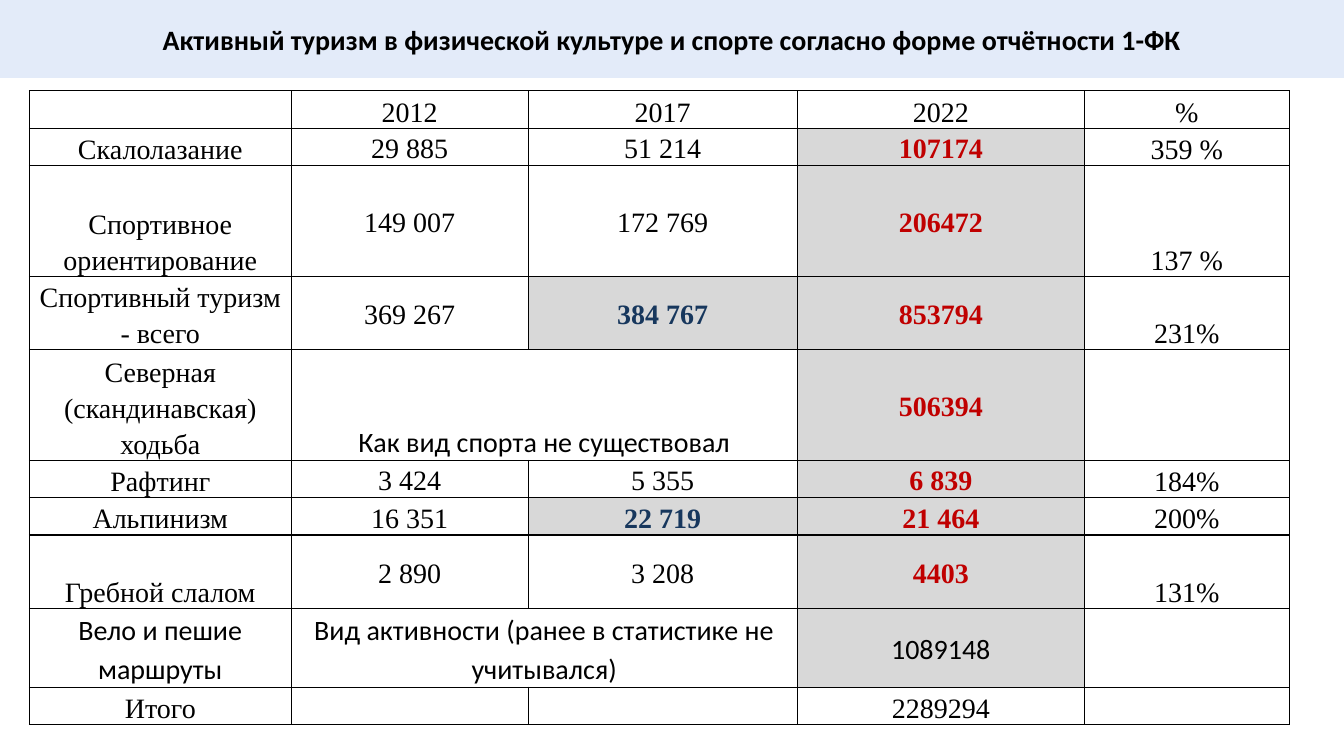
import pptx
import pptx.util
import pptx.dml.color
import pptx.enum.shapes
import pptx.enum.text
import pptx.oxml
import pptx.oxml.ns

Cm, Pt = pptx.util.Cm, pptx.util.Pt
Anchor = pptx.enum.text.MSO_ANCHOR

# Content
title = "Активный туризм в физической культуре и спорте согласно форме отчётности 1-ФК"
# None continues the cell on its left
rows = [
    ("", "2012", "2017", "2022", "%"),
    ("Скалолазание", "29 885", "51 214", "107174", "359 %"),
    ("Спортивное ориентирование", "149 007", "172 769", "206472", "137 %"),
    ("Спортивный туризм - всего", "369 267", "384 767", "853794", "231%"),
    ("Северная (скандинавская) ходьба", "Как вид спорта не существовал", None, "506394", ""),
    ("Рафтинг", "3 424", "5 355", "6 839", "184%"),
    ("Альпинизм", "16 351", "22 719", "21 464", "200%"),
    ("Гребной слалом", "2 890", "3 208", "4403", "131%"),
    ("Вело и пешие маршруты", "Вид активности (ранее в статистике не учитывался)", None,
     "1089148", ""),
    ("Итого", "", "", "2289294", ""),
]
peaks = {(3, 2), (6, 2)}
routes, total, latest = 8, 9, 3
notes = {(4, 1)}

theme = {
    "band": "E3EBF9", "ink": "000000", "red": "C00000", "blue": "17375D", "grey": "D8D8D8",
    "sans": "Calibri", "serif": "Times New Roman", "size": 20,
}

# Layout
widths = [6.6, 5.97, 6.78, 7.24, 5.16]
low, mid, high = 0.94, 1.85, 2.79
heights = [low, low, high, mid, high, low, low, mid, mid, low]


def color(name):
    return pptx.dml.color.RGBColor.from_string(theme[name])


def write(frame, text, font, ink="ink", bold=False):
    frame.text = text
    para = frame.paragraphs[0]
    para.alignment = pptx.enum.text.PP_ALIGN.CENTER
    for run in para.runs:
        run.font.name = theme[font]
        run.font.size = Pt(theme["size"])
        run.font.bold = bold
        run.font.color.rgb = color(ink)
    return para


def border(cell):
    props = cell._tc.get_or_add_tcPr()
    for i, side in enumerate("LRTB"):
        props.insert(i, pptx.oxml.parse_xml(
            f'<a:ln{side} {pptx.oxml.ns.nsdecls("a")} w="12700"><a:solidFill>'
            f'<a:srgbClr val="{theme["ink"]}"/></a:solidFill></a:ln{side}>'))


def style(spot):
    """Return font, ink, bold, shade and anchor for a cell."""
    row, col = spot
    body = 0 < row < total
    shade = spot in peaks or (body and col == latest)
    bold = shade and row != routes
    ink = "blue" if spot in peaks else "red" if bold else "ink"
    font = "sans" if row == routes or spot in notes else "serif"
    inner = body and 0 < col <= latest and spot not in notes
    return font, ink, bold, shade, Anchor.MIDDLE if inner else Anchor.BOTTOM


deck = pptx.Presentation()
deck.slide_width, deck.slide_height = Cm(33.87), Cm(19.05)
slide = deck.slides.add_slide(deck.slide_layouts[6])

# Title band
band = slide.shapes.add_shape(
    pptx.enum.shapes.MSO_SHAPE.RECTANGLE, 0, 0, deck.slide_width, Cm(1.96))
band.shadow.inherit = False
band.fill.solid()
band.fill.fore_color.rgb = color("band")
band.line.color.rgb = color("band")
band.line.width = Pt(1)
band.text_frame.word_wrap = True
band.text_frame.vertical_anchor = Anchor.MIDDLE
write(band.text_frame, title, "sans", bold=True)

# Table grid
table = slide.shapes.add_table(
    len(rows), len(widths), Cm(0.74), Cm(2.29), Cm(sum(widths)), Cm(sum(heights))).table
table.first_row = table.horz_banding = False
for col, width in zip(table.columns, widths):
    col.width = Cm(width)
for line, height in zip(table.rows, heights):
    line.height = Cm(height)

# Table cells
for r, row in enumerate(rows):
    for c, text in enumerate(row):
        cell = table.cell(r, c)
        font, ink, bold, shade, anchor = style((r, c))
        cell.margin_left = cell.margin_right = Cm(0.18)
        cell.margin_top = cell.margin_bottom = 0
        cell.vertical_anchor = anchor
        if shade:
            cell.fill.solid()
            cell.fill.fore_color.rgb = color("grey")
        else:
            cell.fill.background()
        border(cell)
        if text is None:
            table.cell(r, c - 1).merge(cell)
        elif text:
            write(cell.text_frame, text, font, ink, bold).line_spacing = 1.15

deck.save("out.pptx")
